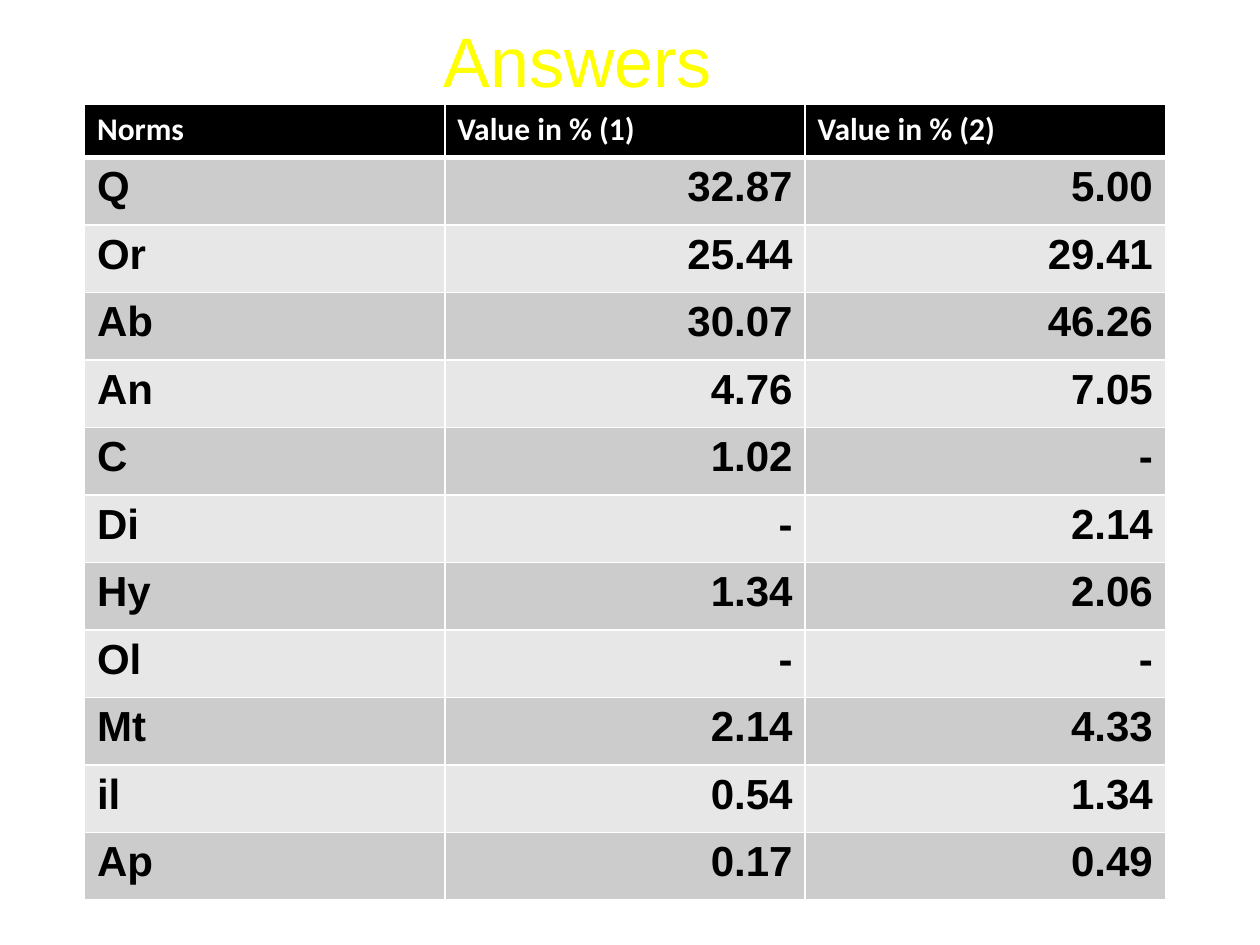
from dataclasses import dataclass

from lxml import etree
from pptx import Presentation
from pptx.dml.color import RGBColor
from pptx.enum.text import MSO_ANCHOR, PP_ALIGN
from pptx.oxml.ns import qn
from pptx.util import Inches, Pt

LEFT, CENTER, RIGHT = PP_ALIGN.LEFT, PP_ALIGN.CENTER, PP_ALIGN.RIGHT
MIDDLE = MSO_ANCHOR.MIDDLE


@dataclass(frozen=True)
class Theme:
    title: str = "FFFF00"
    head_fill: str = "000000"
    head_text: str = "FFFFFF"
    body_text: str = "000000"
    bands: tuple = ("CCCCCC", "E7E7E7")
    rule: str = "FFFFFF"
    title_font: str = "Arial"
    head_font: str = "Calibri"
    body_font: str = "Arial"
    title_size: int = 40
    head_size: int = 18
    body_size: int = 24


theme = Theme()


def write(frame, text, *, font, size, color, bold=False, align=LEFT):
    para = frame.paragraphs[0]
    para.alignment = align
    span = para.add_run()
    span.text = text
    span.font.name = font
    span.font.size = Pt(size)
    span.font.bold = bold
    span.font.color.rgb = RGBColor.from_string(color)


def style_cell(cell, fill, bottom_width):
    # Borders must come before the fill in the cell properties
    props = cell._tc.get_or_add_tcPr()
    for side, width in (("L", 1), ("R", 1), ("T", 1), ("B", bottom_width)):
        line = etree.SubElement(props, qn(f"a:ln{side}"), w=str(Pt(width)))
        solid = etree.SubElement(line, qn("a:solidFill"))
        etree.SubElement(solid, qn("a:srgbClr"), val=theme.rule)
    cell.fill.solid()
    cell.fill.fore_color.rgb = RGBColor.from_string(fill)


deck = Presentation()
deck.slide_width, deck.slide_height = Inches(10), Inches(7.5)
page = deck.slides.add_slide(deck.slide_layouts[6])

# Title
box = page.shapes.add_textbox(Inches(0.5), Inches(0.08), Inches(8.17), Inches(0.78))
box.text_frame.word_wrap = True
box.text_frame.vertical_anchor = MIDDLE
write(box.text_frame, "Answers", font=theme.title_font, size=theme.title_size,
      color=theme.title, align=CENTER)

# Norm values of the two samples
rows = [
    ("Norms", "Value in % (1)", "Value in % (2)"),
    ("Q", "32.87", "5.00"),
    ("Or", "25.44", "29.41"),
    ("Ab", "30.07", "46.26"),
    ("An", "4.76", "7.05"),
    ("C", "1.02", "-"),
    ("Di", "-", "2.14"),
    ("Hy", "1.34", "2.06"),
    ("Ol", "-", "-"),
    ("Mt", "2.14", "4.33"),
    ("il", "0.54", "1.34"),
    ("Ap", "0.17", "0.49"),
]
column_width, head_height, row_height = Inches(2.86), Inches(0.42), Inches(0.536)
column_count, body_count = len(rows[0]), len(rows) - 1
table = page.shapes.add_table(
    len(rows), column_count, Inches(0.67), Inches(0.83),
    column_width * column_count, head_height + row_height * body_count).table

for column in table.columns:
    column.width = column_width

for row_index, values in enumerate(rows):
    is_head = row_index == 0
    table.rows[row_index].height = head_height if is_head else row_height
    for column_index, value in enumerate(values):
        cell = table.cell(row_index, column_index)
        if is_head:
            style_cell(cell, theme.head_fill, bottom_width=3)
            write(cell.text_frame, value, font=theme.head_font, size=theme.head_size,
                  color=theme.head_text, bold=True)
        else:
            style_cell(cell, theme.bands[(row_index - 1) % 2], bottom_width=1)
            write(cell.text_frame, value, font=theme.body_font, size=theme.body_size,
                  color=theme.body_text, bold=True,
                  align=RIGHT if column_index else LEFT)

deck.save("out.pptx")
